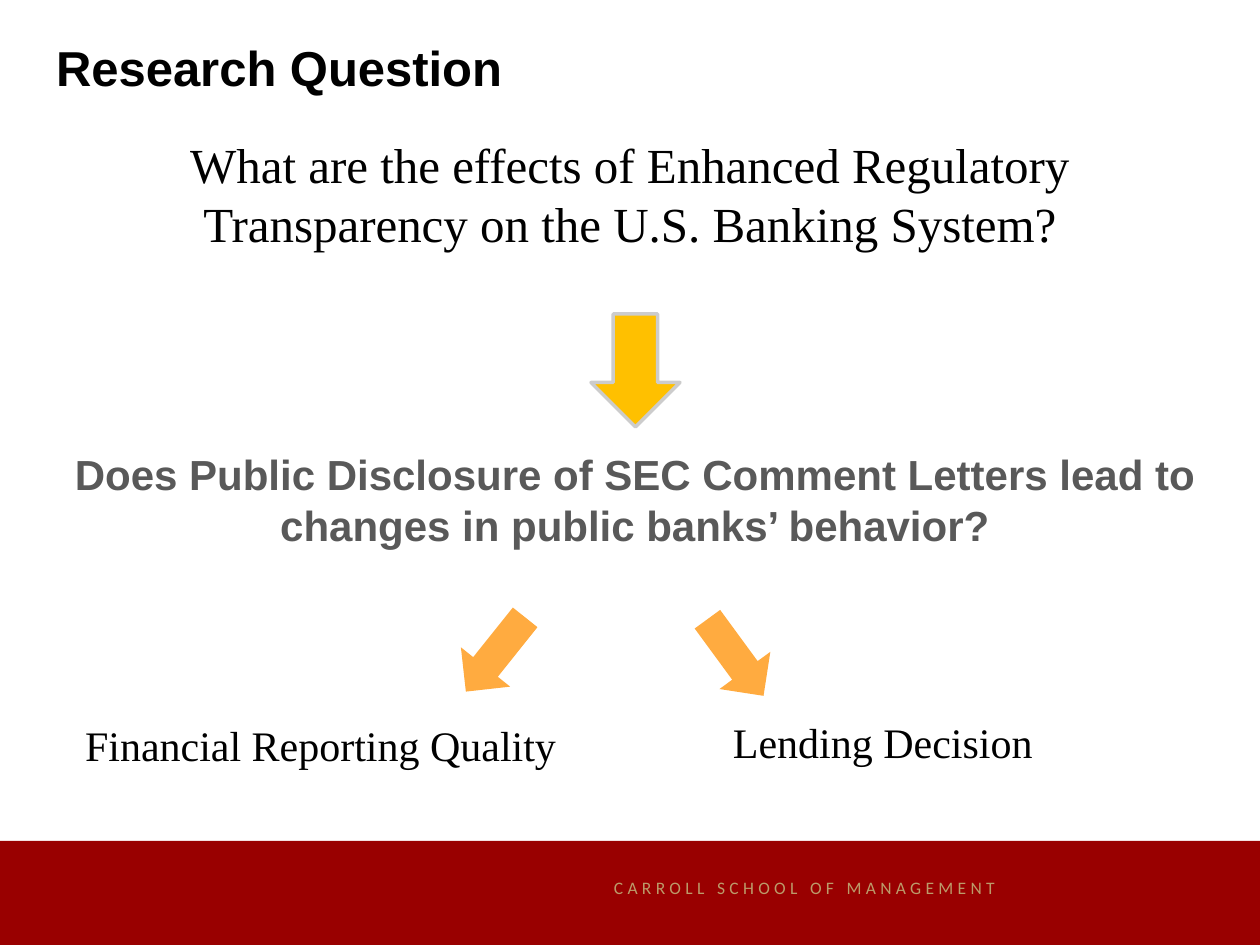
from pptx import Presentation
from pptx.dml.color import RGBColor as RGB
from pptx.enum.shapes import MSO_SHAPE as Shape
from pptx.enum.text import MSO_ANCHOR as Anchor, MSO_AUTO_SIZE as Fit, PP_ALIGN as Align
from pptx.util import Pt

PX = 7257  # EMU per px, 126 px to the inch

COLOR = {"black": "000000", "gray": "595959", "red": "990000", "tan": "BC9B6A",
         "gold": "FFC000", "orange": "FFAB40", "edge": "CCCCCC"}
SANS, SERIF = "Arial", "Times New Roman"

# Content: words, box, font, size, colour, bold, align, inset
TITLE = ("Research Question", (43, 24, 1174, 106), SANS, 28, "black", True, Align.LEFT, 13)
TEXTS = [
    ("Does Public Disclosure of SEC Comment Letters lead to changes in public banks’ behavior?",
     (0, 436, 1270, 179), SANS, 24, "gray", True, Align.CENTER, 13),
    ("What are the effects of Enhanced Regulatory Transparency on the U.S. Banking System?",
     (43, 129, 1174, 131), SERIF, 28, "black", False, Align.CENTER, 6),
    ("Financial Reporting Quality",
     (73, 714, 577, 63), SERIF, 24, "black", False, Align.LEFT, 6),
    ("Lending Decision",
     (721, 711, 539, 63), SERIF, 24, "black", False, Align.LEFT, 6),
]
SCHOOL = ("CARROLL SCHOOL OF MANAGEMENT", (602, 871, 445, 34), "Calibri", 10, "tan",
          False, Align.LEFT, 12)

# Arrows: box, turn, fill, edge
ARROWS = [
    ((591, 314, 89, 113), 0, "gold", "edge"),
    ((464, 607, 63, 95), 38.6, "orange", None),
    ((704, 610, 63, 95), 323.8, "orange", None),
]
BAND = (0, 841, 1260, 104)


def rgb(name):
    return RGB.from_string(COLOR[name])


def emu(box):
    return [n * PX for n in box]


def write(shape, item, wrap=True, anchor=Anchor.TOP):
    words, box, face, size, color, bold, align, inset = item
    shape.left, shape.top, shape.width, shape.height = emu(box)
    frame = shape.text_frame
    frame.word_wrap = wrap
    frame.auto_size = Fit.NONE
    frame.vertical_anchor = anchor
    frame.margin_left = frame.margin_right = max(inset, 12) * PX
    frame.margin_top = frame.margin_bottom = inset * PX
    para = frame.paragraphs[0]
    para.alignment = align
    run = para.add_run()
    run.text = words
    font = run.font
    font.name, font.size, font.bold = face, Pt(size), bold
    font.color.rgb = rgb(color)
    return run


def draw(slide, kind, box, fill, edge=None):
    shape = slide.shapes.add_shape(kind, *emu(box))
    shape.shadow.inherit = False
    shape.fill.solid()
    shape.fill.fore_color.rgb = rgb(fill)
    if edge:
        shape.line.color.rgb = rgb(edge)
        shape.line.width = Pt(2)
    else:
        shape.line.fill.background()
    return shape


def main():
    deck = Presentation()
    deck.slide_width, deck.slide_height = 1260 * PX, 945 * PX
    slide = deck.slides.add_slide(deck.slide_layouts[5])

    # Footer band with the school name
    draw(slide, Shape.RECTANGLE, BAND, "red")
    label = slide.shapes.add_textbox(*emu(SCHOOL[1]))
    run = write(label, SCHOOL, wrap=False, anchor=Anchor.MIDDLE)
    run.font._element.set("spc", "250")

    # Title and texts
    write(slide.shapes.title, TITLE)
    for item in TEXTS:
        write(slide.shapes.add_textbox(*emu(item[1])), item)

    # Arrows between the questions
    for box, turn, fill, edge in ARROWS:
        draw(slide, Shape.DOWN_ARROW, box, fill, edge).rotation = turn

    deck.save("out.pptx")


if __name__ == "__main__":
    main()
